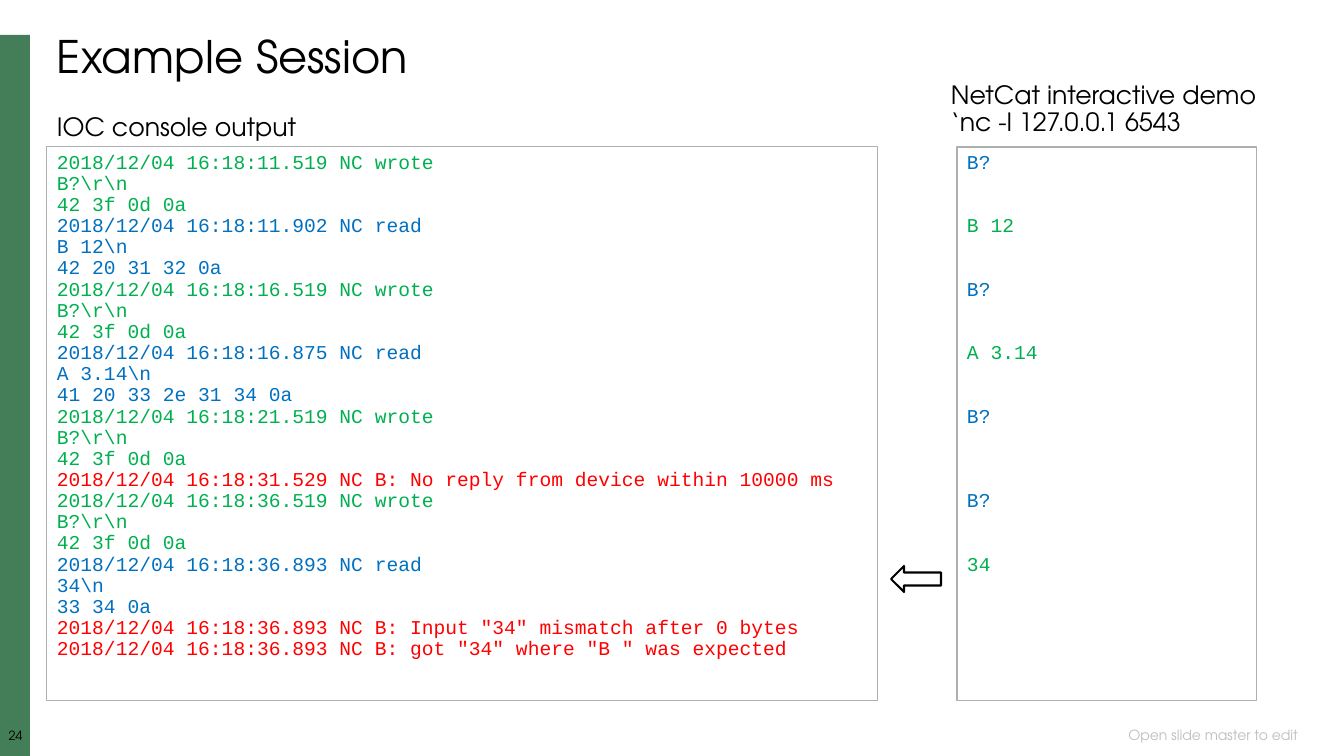
import pptx
import pptx.util
import pptx.dml.color
import pptx.enum.shapes
import pptx.enum.text
import pptx.oxml.ns
import lxml.etree

SCALE = 12192000 / 1344
PITCH = 15.12
SANS, MONO = "TeX Gyre Adventor", "Courier New"
BLACK, GREY, EDGE, BAR = "000000", "BFBFBF", "AEB0AF", "447E59"
GREEN, BLUE, RED = "00B050", "0070C0", "FF0000"
SHAPE = pptx.enum.shapes.MSO_SHAPE
ALIGN = pptx.enum.text.PP_ALIGN
ANCHOR = pptx.enum.text.MSO_ANCHOR
FIT = pptx.enum.text.MSO_AUTO_SIZE

LOG = [
    (GREEN, ["2018/12/04 16:18:11.519 NC wrote", r"B?\r\n", "42 3f 0d 0a"]),
    (BLUE, ["2018/12/04 16:18:11.902 NC read", r"B 12\n", "42 20 31 32 0a"]),
    (GREEN, ["2018/12/04 16:18:16.519 NC wrote", r"B?\r\n", "42 3f 0d 0a"]),
    (BLUE, ["2018/12/04 16:18:16.875 NC read", r"A 3.14\n", "41 20 33 2e 31 34 0a"]),
    (GREEN, ["2018/12/04 16:18:21.519 NC wrote", r"B?\r\n", "42 3f 0d 0a"]),
    (RED, ["2018/12/04 16:18:31.529 NC B: No reply from device within 10000 ms"]),
    (GREEN, ["2018/12/04 16:18:36.519 NC wrote", r"B?\r\n", "42 3f 0d 0a"]),
    (BLUE, ["2018/12/04 16:18:36.893 NC read", r"34\n", "33 34 0a"]),
    (RED, ['2018/12/04 16:18:36.893 NC B: Input "34" mismatch after 0 bytes',
           '2018/12/04 16:18:36.893 NC B: got "34" where "B " was expected']),
]
DEMO = [
    ("B?", BLUE, 0), ("B 12", GREEN, 2), ("B?", BLUE, 2), ("A 3.14", GREEN, 2),
    ("B?", BLUE, 2), ("B?", BLUE, 3), ("34", GREEN, 2),
]


def px(num):
    return pptx.util.Emu(round(num * SCALE))


def tint(code):
    return pptx.dml.color.RGBColor.from_string(code)


def write(para, text, size=14, font=MONO, color=BLACK, align=ALIGN.LEFT, lead=0.9, gap=0):
    props = para._p.get_or_add_pPr()
    props.set("marL", "0")
    props.set("indent", "0")
    lxml.etree.SubElement(props, pptx.oxml.ns.qn("a:buNone"))
    para.alignment = align
    para.line_spacing = lead
    para.space_before = pptx.util.Pt(gap)
    para.space_after = pptx.util.Pt(0)
    run = para.add_run()
    run.text = text
    run.font.size = pptx.util.Pt(size)
    run.font.name = font
    run.font.color.rgb = tint(color)


class Deck:
    """Holds the style and the current slide, and adds each kind of element."""

    def __init__(self):
        self.file = pptx.Presentation()
        self.file.slide_width, self.file.slide_height = px(1344), px(756)
        self.slide = self.file.slides.add_slide(self.file.slide_layouts[1])

    def place(self, item, box):
        item.left, item.top, item.width, item.height = map(px, box)
        return item

    def fill(self, item, rows, anchor=ANCHOR.TOP, wrap=True, fit=FIT.NONE, inset=(10, 5), **style):
        frame = item.text_frame
        frame.word_wrap = wrap
        frame.auto_size = fit
        frame.vertical_anchor = anchor
        frame.margin_left = frame.margin_right = px(inset[0])
        frame.margin_top = frame.margin_bottom = px(inset[1])
        for num, (text, extra) in enumerate(rows):
            para = frame.add_paragraph() if num else frame.paragraphs[0]
            write(para, text, **{**style, **extra})

    def title(self, text, box):
        item = self.place(self.slide.shapes.title, box)
        self.fill(item, [(text, {})], size=32, font=SANS)

    def label(self, lines, box, **style):
        item = self.slide.shapes.add_textbox(*map(px, box))
        self.fill(item, [(line, {}) for line in lines], **{"font": SANS, **style})

    def shape(self, kind, box, fill=None, line=None, width=0.75):
        item = self.slide.shapes.add_shape(kind, *map(px, box))
        item.shadow.inherit = False
        self.paint(item, fill, line, width)
        return item

    def paint(self, item, fill, line, width):
        if fill:
            item.fill.solid()
            item.fill.fore_color.rgb = tint(fill)
        else:
            item.fill.background()
        if line:
            item.line.color.rgb = tint(line)
            item.line.width = pptx.util.Pt(width)
        else:
            item.line.fill.background()

    def body(self, rows, box):
        item = self.place(self.slide.placeholders[1], box)
        self.paint(item, None, EDGE, 0.75)
        self.fill(item, rows, lead=pptx.util.Pt(PITCH))

    def panel(self, rows, box):
        item = self.shape(SHAPE.RECTANGLE, box, line=EDGE)
        self.fill(item, rows, lead=pptx.util.Pt(PITCH))

    def save(self):
        self.file.save("out.pptx")


def main():
    deck = Deck()
    deck.shape(SHAPE.RECTANGLE, (0, 35, 30, 721), fill=BAR)
    deck.label(["24"], (0, 730, 31, 17), size=9, align=ALIGN.CENTER, inset=(0, 0))
    deck.label(["Open slide master to edit"], (883, 726, 425, 20), size=10,
               color=GREY, align=ALIGN.RIGHT, anchor=ANCHOR.MIDDLE)
    deck.title("Example Session", (47, 30, 1260, 59))
    deck.body([(text, {"color": color, "gap": lines * PITCH}) for text, color, lines in DEMO],
              (957, 147, 300, 554))
    deck.panel([(line, {"color": color}) for color, lines in LOG for line in lines],
               (47, 147, 831, 554))
    head = {"size": 18, "wrap": False, "fit": FIT.SHAPE_TO_FIT_TEXT}
    deck.label(["IOC console output"], (47, 110, 262, 37), **head)
    deck.label(["NetCat interactive demo", "‘nc -l 127.0.0.1 6543"],
               (941, 78, 332, 65), **head)
    arrow = deck.shape(SHAPE.RIGHT_ARROW, (891, 566, 50, 26), line=BLACK, width=1.5)
    arrow.rotation = 180
    deck.save()


if __name__ == "__main__":
    main()
